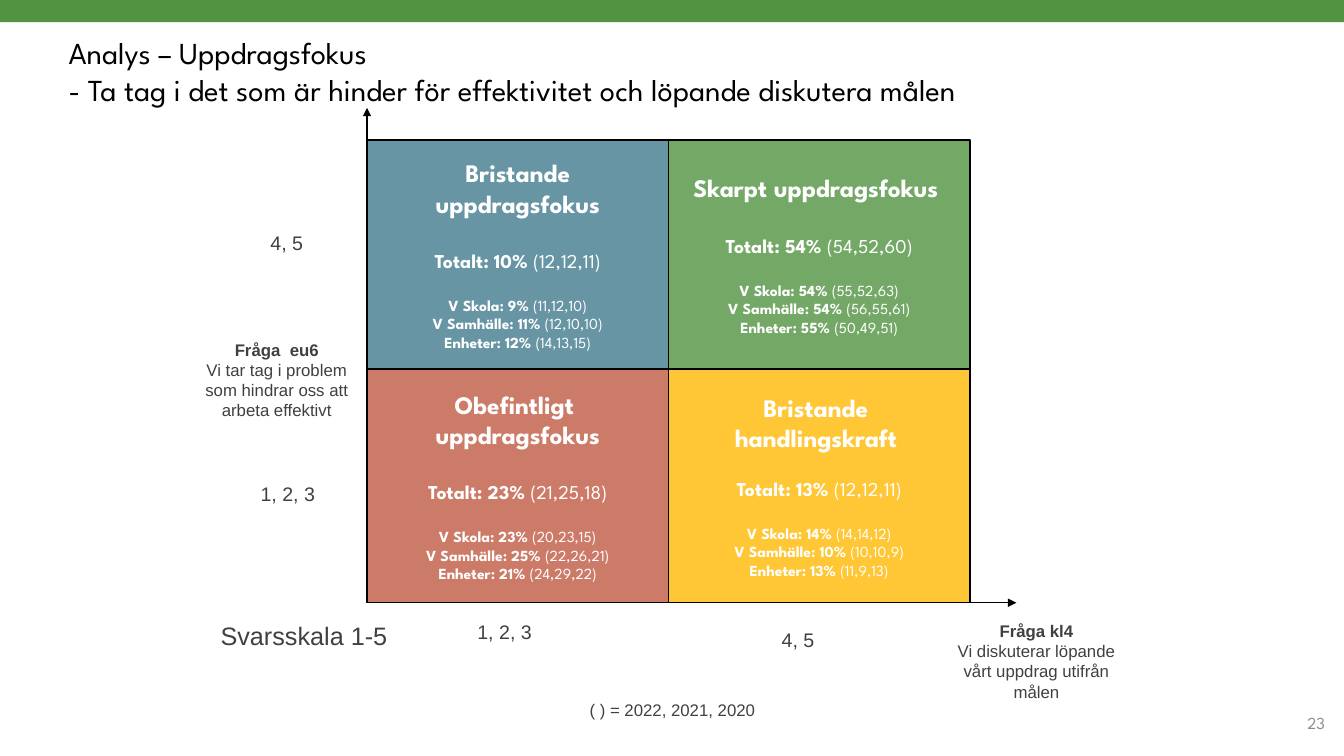
import pptx
import pptx.util
import pptx.dml.color
import pptx.enum.shapes
import pptx.enum.text
import pptx.oxml
import pptx.oxml.ns
from lxml import etree

Inches, Pt = pptx.util.Inches, pptx.util.Pt
SHAPE = pptx.enum.shapes.MSO_SHAPE
ALIGN = pptx.enum.text.PP_ALIGN
ANCHOR = pptx.enum.text.MSO_ANCHOR
COLORS = {"green": "529341", "blue": "417B8D", "red": "C15A44", "yellow": "FFBA03",
          "black": "000000", "white": "FFFFFF", "text": "404040", "number": "8C8C8C"}
HEAD_FONT, BODY_FONT = "League Spartan", "Arial"


def rgb(name):
    return pptx.dml.color.RGBColor.from_string(COLORS[name])


def add_run(p, text, size, color, font=BODY_FONT, bold=False):
    r = p.add_run()
    r.text = text
    r.font.name, r.font.size, r.font.bold = font, Pt(size), bold
    r.font.color.rgb = rgb(color)


def add_para(tf, first, align=ALIGN.CENTER, before=0):
    p = tf.paragraphs[0] if first else tf.add_paragraph()
    p.alignment = align
    p.space_before = Pt(before)
    return p


def add_box(s, x, y, w, h, fill):
    sp = s.shapes.add_shape(SHAPE.RECTANGLE, Inches(x), Inches(y), Inches(w), Inches(h))
    sp.shadow.inherit = False
    sp.fill.solid()
    sp.fill.fore_color.rgb = rgb(fill)
    return sp


def add_header(s, x, y, w, h):
    bar = add_box(s, 0, 0, 13.33, 0.22, "green")
    bar.line.fill.background()
    title = s.shapes.title
    title.left, title.top, title.width, title.height = map(Inches, (x, y, w, h))
    tf = title.text_frame
    tf.word_wrap = True
    tf.auto_size = pptx.enum.text.MSO_AUTO_SIZE.NONE
    tf.vertical_anchor = ANCHOR.TOP
    p = add_para(tf, True, ALIGN.LEFT)
    add_run(p, "Analys – Uppdragsfokus", 21.8, "black", HEAD_FONT)
    p.add_line_break()
    add_run(p, "- Ta tag i det som är hinder för effektivitet och löpande diskutera målen",
            21.8, "black", HEAD_FONT)


def add_quadrant(s, x, y, w, h, fill, heading, gap, total, units):
    sp = add_box(s, x, y, w, h, fill)
    sp.line.color.rgb = rgb("black")
    sp.line.width = Pt(1)
    color = sp.fill._xPr.find(".//" + pptx.oxml.ns.qn("a:srgbClr"))
    etree.SubElement(color, pptx.oxml.ns.qn("a:alpha"), val="80000")
    tf = sp.text_frame
    tf.word_wrap = False
    tf.vertical_anchor = ANCHOR.MIDDLE
    for i, text in enumerate(heading):
        add_run(add_para(tf, i == 0), text, 18, "white", HEAD_FONT, True)
    rows = [("Totalt", total, 14, gap)]
    for i, (name, values) in enumerate(zip(("V Skola", "V Samhälle", "Enheter"), units)):
        rows.append((name, values, 11, 17 if i == 0 else 0))
    for name, (now, earlier), size, before in rows:
        p = add_para(tf, False, before=before)
        add_run(p, f"{name}: {now}% ", size, "white", HEAD_FONT, True)
        add_run(p, f"({earlier})", size, "white", HEAD_FONT)


def add_axis(s, x1, y1, x2, y2):
    c = s.shapes.add_connector(pptx.enum.shapes.MSO_CONNECTOR.STRAIGHT,
                               Inches(x1), Inches(y1), Inches(x2), Inches(y2))
    c.line.color.rgb = rgb("black")
    c.line.width = Pt(1)
    etree.SubElement(c.line._get_or_add_ln(), pptx.oxml.ns.qn("a:tailEnd"), type="triangle")
    etree.SubElement(c._element.spPr, pptx.oxml.ns.qn("a:effectLst"))


def add_matrix(s, x, y, w, h):
    col, top = w / 2, 2.27
    quadrants = [
        (1, 1, "yellow", ["Bristande ", "handlingskraft "], 17, (13, "12,12,11"),
         [(14, "14,14,12"), (10, "10,10,9"), (13, "11,9,13")]),
        (0, 0, "blue", ["Bristande", "uppdragsfokus"], 21.8, (10, "12,12,11"),
         [(9, "11,12,10"), (11, "12,10,10"), (12, "14,13,15")]),
        (0, 1, "red", ["Obefintligt ", "uppdragsfokus"], 21.8, (23, "21,25,18"),
         [(23, "20,23,15"), (25, "22,26,21"), (21, "24,29,22")]),
        (1, 0, "green", ["Skarpt uppdragsfokus "], 21.8, (54, "54,52,60"),
         [(54, "55,52,63"), (54, "56,55,61"), (55, "50,49,51")]),
    ]
    for c, r, *content in quadrants:
        add_quadrant(s, x + c * col, y + r * top, col, h - top if r else top, *content)
    add_axis(s, x, y + h, x, y - 0.32)
    add_axis(s, x, y + h, x + w + 0.46, y + h)


def add_text(s, x, y, w, h, lines, size=14, color="text", font=BODY_FONT,
             align=ALIGN.CENTER, wrap=False, anchor=ANCHOR.TOP):
    tf = s.shapes.add_textbox(Inches(x), Inches(y), Inches(w), Inches(h)).text_frame
    tf.word_wrap = wrap
    tf.auto_size = pptx.enum.text.MSO_AUTO_SIZE.SHAPE_TO_FIT_TEXT
    tf.vertical_anchor = anchor
    for i, text in enumerate(lines):
        add_run(add_para(tf, i == 0, align), text, size, color, font,
                bold=len(lines) > 1 and i == 0)


def add_labels(s):
    add_text(s, 1.9, 3.32, 1.69, 0.91,
             ["Fråga  eu6", "Vi tar tag i problem som hindrar oss att arbeta effektivt"],
             12, wrap=True)
    add_text(s, 9.33, 6.11, 1.9, 0.91,
             ["Fråga kl4", "Vi diskuterar löpande vårt uppdrag utifrån målen"], 12, wrap=True)
    for x, y, w, text in [(4.63, 6.1, 0.75, "1, 2, 3"), (2.48, 4.73, 0.75, "1, 2, 3"),
                          (7.65, 6.18, 0.53, "4, 5"), (2.58, 2.24, 0.53, "4, 5")]:
        add_text(s, x, y, w, 0.34, [text])
    add_text(s, 2.08, 6.1, 1.87, 0.4, ["Svarsskala 1-5"], 18)


def add_footer(s):
    add_text(s, 10.13, 6.97, 3.11, 0.4, ["23"], 12, "number", HEAD_FONT,
             ALIGN.RIGHT, True, ANCHOR.MIDDLE)
    add_text(s, 5.74, 6.89, 1.86, 0.3, ["( ) = 2022, 2021, 2020"], 12)


def main():
    prs = pptx.Presentation()
    prs.slide_width, prs.slide_height = Inches(13.33), Inches(7.5)
    s = prs.slides.add_slide(prs.slide_layouts[5])
    add_header(s, 0.58, 0.29, 11.36, 1.1)
    add_matrix(s, 3.64, 1.39, 5.98, 4.59)
    add_labels(s)
    add_footer(s)
    prs.save("out.pptx")


if __name__ == "__main__":
    main()
